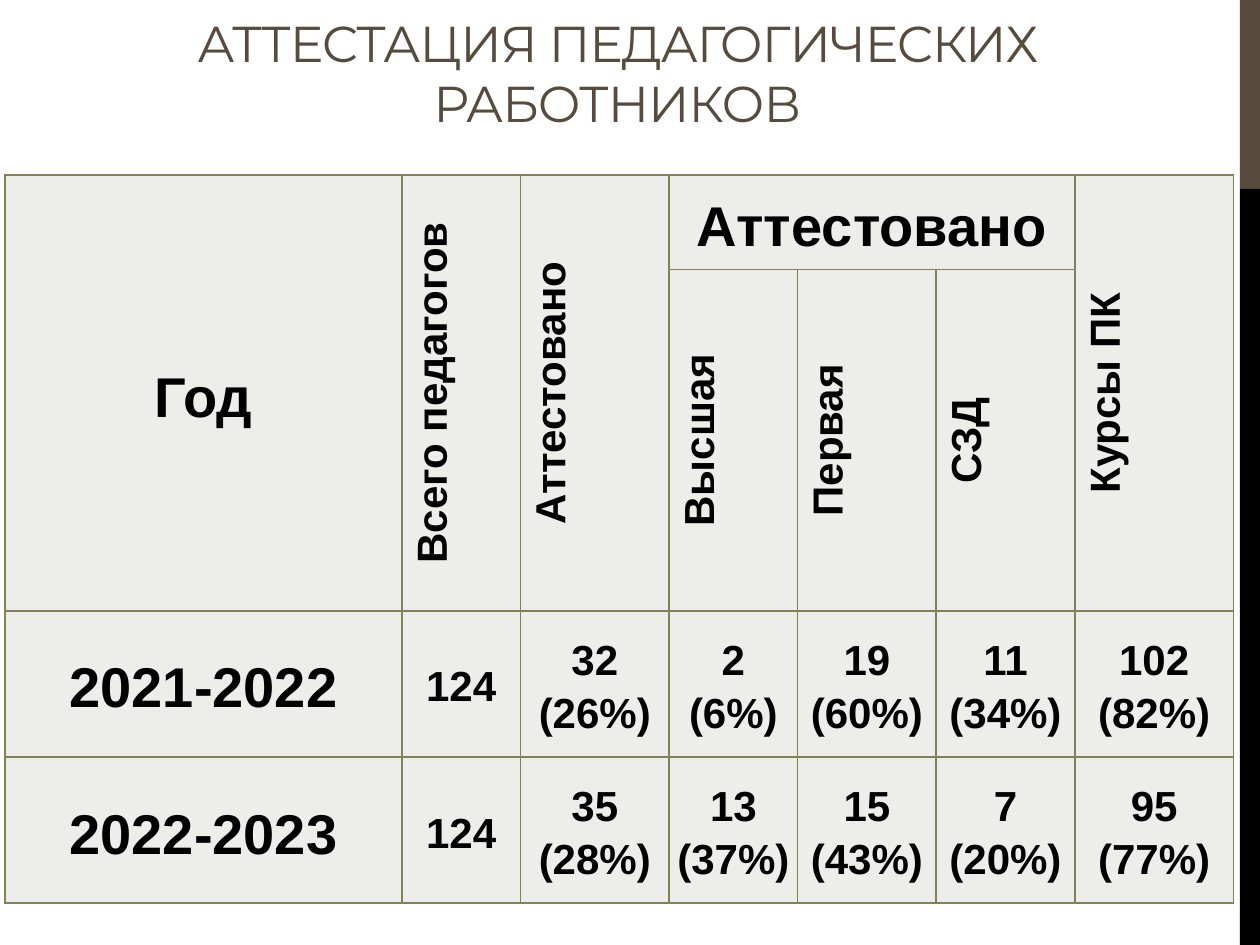
from dataclasses import dataclass

from lxml.etree import SubElement
from pptx import Presentation
from pptx.dml.color import RGBColor
from pptx.enum.shapes import MSO_SHAPE
from pptx.enum.text import MSO_ANCHOR, PP_ALIGN
from pptx.oxml.ns import qn
from pptx.util import Pt


@dataclass(frozen=True)
class Theme:
    brown: str = "564B3C"
    black: str = "000000"
    cell: str = "EDEDEA"
    border: str = "848058"
    title_font: str = "Montserrat"
    table_font: str = "Arial"
    title_size: float = 28.8
    large_size: int = 32
    small_size: int = 24


THEME = Theme()
COLUMN_WIDTHS = (226.8, 67.7, 85, 73.4, 79.2, 79.2, 90.7)
ROW_HEIGHTS = (54, 153.4, 83.5, 83.5)
# Row and column of the first and last cell of each merged area
MERGES = [((0, column), (1, column)) for column in (0, 1, 2, 6)] + [((0, 3), (0, 5))]
LARGE_HEADERS = {(0, 0): "Год", (0, 3): "Аттестовано"}
VERTICAL_HEADERS = {
    (0, 1): "Всего педагогов",
    (0, 2): "Аттестовано",
    (0, 6): "Курсы ПК",
    (1, 3): "Высшая",
    (1, 4): "Первая",
    (1, 5): "СЗД",
}
YEARS = (
    ("2021-2022", "124", "32 (26%)", "2 (6%)", "19 (60%)", "11 (34%)", "102 (82%)"),
    ("2022-2023", "124", "35 (28%)", "13 (37%)", "15 (43%)", "7 (20%)", "95 (77%)"),
)


def apply_format(target, values):
    for name, value in values.items():
        setattr(target, name, value)


def set_fill(fill, color):
    fill.solid()
    fill.fore_color.rgb = RGBColor.from_string(color)


def write_text(text_frame, text, color, line_spacing=None, **font_values):
    """Put one centred run into the frame and return it."""
    paragraph = text_frame.paragraphs[0]
    apply_format(paragraph, {"alignment": PP_ALIGN.CENTER, "line_spacing": line_spacing})
    run = paragraph.add_run()
    run.text = text
    apply_format(run.font, font_values)
    run.font.color.rgb = RGBColor.from_string(color)
    return run


def add_side_bar(slide, top, height, color):
    shape = slide.shapes.add_shape(
        MSO_SHAPE.RECTANGLE, Pt(708.5), Pt(top), Pt(11.5), Pt(height))
    shape.shadow.inherit = False
    shape.line.fill.background()
    set_fill(shape.fill, color)


def add_title(slide, text):
    text_frame = slide.shapes.add_textbox(Pt(0), Pt(0), Pt(705.6), Pt(82.8)).text_frame
    apply_format(text_frame, {
        "word_wrap": True,
        "vertical_anchor": MSO_ANCHOR.MIDDLE,
        "margin_left": Pt(36),
        "margin_right": Pt(36),
    })
    run = write_text(text_frame, text, THEME.brown,
                     name=THEME.title_font, size=Pt(THEME.title_size))
    run.font._element.set("spc", "-60")


def add_borders(cell):
    properties = cell._tc.get_or_add_tcPr()
    for side in ("lnL", "lnR", "lnT", "lnB"):
        line = SubElement(properties, qn(f"a:{side}"), w=str(int(Pt(1))))
        fill = SubElement(line, qn("a:solidFill"))
        SubElement(fill, qn("a:srgbClr"), val=THEME.border)


def format_cell(cell):
    add_borders(cell)
    set_fill(cell.fill, THEME.cell)
    apply_format(cell, {
        "vertical_anchor": MSO_ANCHOR.MIDDLE,
        "margin_left": Pt(3.6),
        "margin_right": Pt(3.6),
        "margin_top": 0,
        "margin_bottom": 0,
    })


def write_cell(cell, text, size):
    write_text(cell.text_frame, text, THEME.black, line_spacing=1.15,
               name=THEME.table_font, size=Pt(size), bold=True)


def add_staff_table(slide):
    table = slide.shapes.add_table(
        len(ROW_HEIGHTS), len(COLUMN_WIDTHS), Pt(2.9), Pt(100.1),
        Pt(sum(COLUMN_WIDTHS)), Pt(sum(ROW_HEIGHTS))).table
    apply_format(table, {"first_row": False, "horz_banding": False})
    for column, width in zip(table.columns, COLUMN_WIDTHS):
        column.width = Pt(width)
    for row, height in zip(table.rows, ROW_HEIGHTS):
        row.height = Pt(height)
    for cell in table.iter_cells():
        format_cell(cell)
    for first, last in MERGES:
        table.cell(*first).merge(table.cell(*last))

    for position, text in LARGE_HEADERS.items():
        write_cell(table.cell(*position), text, THEME.large_size)
    for position, text in VERTICAL_HEADERS.items():
        cell = table.cell(*position)
        write_cell(cell, text, THEME.small_size)
        cell._tc.get_or_add_tcPr().set("vert", "vert270")
    for row, values in enumerate(YEARS, start=2):
        for column, text in enumerate(values):
            size = THEME.small_size if column else THEME.large_size
            write_cell(table.cell(row, column), text, size)


def main():
    presentation = Presentation()
    apply_format(presentation, {"slide_width": Pt(720), "slide_height": Pt(540)})
    slide = presentation.slides.add_slide(presentation.slide_layouts[6])
    add_side_bar(slide, 0, 108, THEME.brown)
    add_side_bar(slide, 108, 432, THEME.black)
    add_title(slide, "АТТЕСТАЦИЯ ПЕДАГОГИЧЕСКИХ РАБОТНИКОВ")
    add_staff_table(slide)
    presentation.save("out.pptx")


if __name__ == "__main__":
    main()
